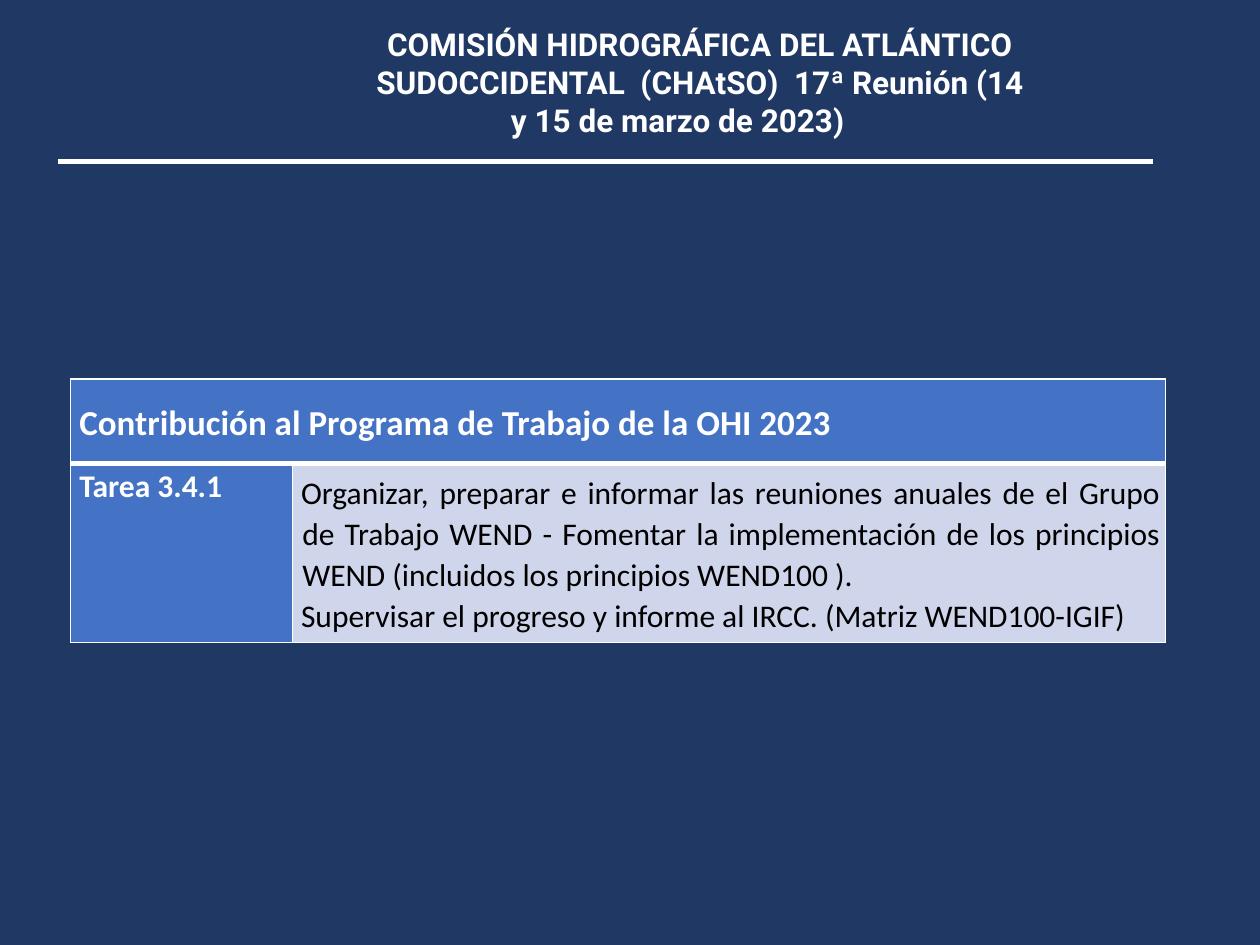
from dataclasses import dataclass
from lxml.etree import SubElement as Sub
from pptx import Presentation as Deck
from pptx.dml.color import RGBColor as Rgb
from pptx.enum.shapes import MSO_CONNECTOR as Link
from pptx.enum.text import MSO_ANCHOR as Anchor, PP_ALIGN as Align
from pptx.oxml.ns import qn
from pptx.util import Inches, Pt


@dataclass(frozen=True)
class Theme:
    navy: str = "203864"
    blue: str = "4472C4"
    pale: str = "CFD5EA"
    white: str = "FFFFFF"
    black: str = "000000"
    head: str = "Roboto"
    body: str = "Calibri"
    large: int = 20
    text: int = 18


class Page:
    def __init__(self, deck, theme):
        self.theme = theme
        self.slide = deck.slides.add_slide(deck.slide_layouts[6])
        fill = self.slide.background.fill
        fill.solid()
        fill.fore_color.rgb = Rgb.from_string(theme.navy)

    def style(self, para, face, size, color, bold):
        font = para.font
        font.name, font.size, font.bold = face, Pt(size), bold
        font.color.rgb = Rgb.from_string(color)

    def title(self, box, text):
        frame = self.slide.shapes.add_textbox(*map(Inches, box)).text_frame
        frame.word_wrap = True
        para = frame.paragraphs[0]
        para.text = text
        para.alignment = Align.CENTER
        para.space_after = Pt(6)
        self.style(para, self.theme.head, self.theme.text, self.theme.white, True)

    def rule(self, start, end, width):
        line = self.slide.shapes.add_connector(Link.STRAIGHT, *map(Inches, start + end))
        line.line.color.rgb = Rgb.from_string(self.theme.white)
        line.line.width = Pt(width)
        Sub(line._element.spPr, qn("a:effectLst"))

    def grid(self, box, cols, rows):
        shape = self.slide.shapes.add_table(len(rows), len(cols), *map(Inches, box))
        table = shape.table
        for col, width in zip(table.columns, cols):
            col.width = Inches(width)
        for row, height in zip(table.rows, rows):
            row.height = Inches(height)
        return table

    def edge(self, cell, top, bottom):
        props = cell._tc.get_or_add_tcPr()
        for side, width in zip("LRTB", (1, 1, top, bottom)):
            line = Sub(props, qn(f"a:ln{side}"), w=str(Pt(width)))
            Sub(Sub(line, qn("a:solidFill")), qn("a:srgbClr"), val=self.theme.white)

    def cell(self, cell, lines, fill, color, size, bold, anchor, align):
        cell.fill.solid()
        cell.fill.fore_color.rgb = Rgb.from_string(fill)
        cell.vertical_anchor = anchor
        cell.margin_left, cell.margin_right = Inches(0.07), Inches(0.04)
        cell.margin_top, cell.margin_bottom = Inches(0.01), 0
        cell.text = "\n".join(lines)
        for para in cell.text_frame.paragraphs:
            para.alignment = align
            para.line_spacing = 1.07
            props = para._p.get_or_add_pPr()
            props.set("marL", str(Inches(0.01)))
            props.set("indent", str(Inches(-0.01)))
            self.style(para, self.theme.body, size, color, bold)


def main():
    deck = Deck()
    deck.slide_width, deck.slide_height = Inches(10), Inches(7.5)
    theme = Theme()
    page = Page(deck, theme)

    page.title(
        (2.85, 0.15, 5.41, 1.01),
        "COMISIÓN HIDROGRÁFICA DEL ATLÁNTICO SUDOCCIDENTAL  (CHAtSO)  "
        "17ª Reunión (14 y 15 de marzo de 2023)\t",
    )
    page.rule((0.46, 1.28), (9.15, 1.28), 3)

    table = page.grid((0.56, 3.01, 8.69, 2.09), (1.76, 6.93), (0.67, 1.42))
    for row, (top, bottom) in enumerate([(1, 3), (3, 1)]):
        for col in range(2):
            page.edge(table.cell(row, col), top, bottom)
    table.cell(0, 0).merge(table.cell(0, 1))

    page.cell(
        table.cell(0, 0), ["Contribución al Programa de Trabajo de la OHI 2023"],
        theme.blue, theme.white, theme.large, True, Anchor.MIDDLE, Align.LEFT,
    )
    page.cell(
        table.cell(1, 0), ["Tarea 3.4.1"],
        theme.blue, theme.white, theme.text, True, Anchor.TOP, Align.LEFT,
    )
    page.cell(
        table.cell(1, 1),
        [
            "Organizar, preparar e informar las reuniones anuales de el Grupo de "
            "Trabajo WEND - Fomentar la implementación de los principios WEND "
            "(incluidos los principios WEND100 ).",
            "Supervisar el progreso y informe al IRCC. (Matriz WEND100-IGIF)",
        ],
        theme.pale, theme.black, theme.text, False, Anchor.MIDDLE, Align.JUSTIFY,
    )
    deck.save("out.pptx")


if __name__ == "__main__":
    main()
